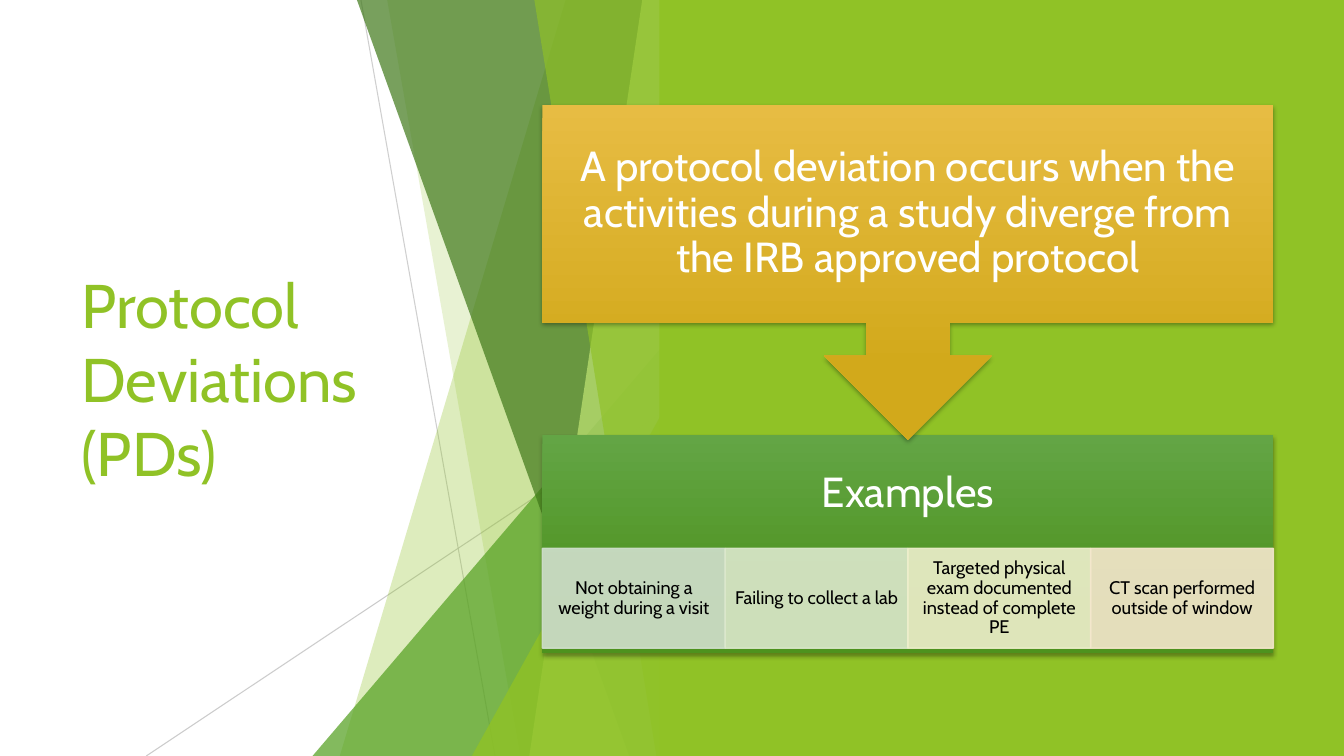
import pptx
import pptx.util
import pptx.dml.color
import pptx.enum.shapes
import pptx.enum.text
import pptx.oxml
import pptx.oxml.ns

Inches = pptx.util.Inches
Pt = pptx.util.Pt
SHAPES = pptx.enum.shapes.MSO_SHAPE
ALIGN = pptx.enum.text.PP_ALIGN

FONT = "Cabin"
SLIDE_W, SLIDE_H = 13.33, 7.5
TITLE = "Protocol Deviations (PDs)"
DEFINITION = ("A protocol deviation occurs when the activities during a study "
              "diverge from the IRB approved protocol")
EXAMPLES_HEADING = "Examples"
EXAMPLES = [
    ("Not obtaining a weight during a visit", "D1DFCD"),
    ("Failing to collect a lab", "DCE8CC"),
    ("Targeted physical exam documented instead of complete PE", "EEEFCC"),
    ("CT scan performed outside of window", "F5E7CD"),
]
GOLD = ("E7BC43", "D2A91B")
GREEN = ("63A545", "4D921E")

RAYS = [((3.58, 0), (4.91, 7.5), 75), ((6.66, 4.03), (1.45, 7.5), 80)]
FACET_RIGHT = 6.66
FACETS = [
    ("band", 5.61, 3.37, "90C226", 30),
    ("band", 3.84, 5.16, "90C226", 20),
    ("triangle", 3.1, 3.33, "54A021", 72),
    ("band", 3.54, 6.24, "3F7819", 70),
    ("band", 6.37, 5.25, "C0E474", 70),
    ("band", 5.3, 6.51, "90C226", 65),
    ("triangle", 4.68, 3.93, "90C226", 80),
]

PANEL_X, PANEL_W = 5.38, 7.25
CALLOUT_Y, CALLOUT_H = 1.04, 3.32
EXAMPLES_Y, EXAMPLES_H, HEADING_H = 4.32, 2.16, 1.16
CELL_Y, CELL_H = 5.44, 0.99
CELL_W = PANEL_W / len(EXAMPLES)
PANEL_INSET = 0.23


def paint(color_format, color, alpha=100):
    color_format.rgb = pptx.dml.color.RGBColor.from_string(color)


def fade(part, alpha):
    for color in part.iter(pptx.oxml.ns.qn("a:srgbClr")):
        color.append(pptx.oxml.parse_xml(
            f'<a:alpha {pptx.oxml.ns.nsdecls("a")} val="{alpha * 1000}"/>'))


def fill_solid(shape, color, alpha=100):
    shape.shadow.inherit = False
    shape.fill.solid()
    paint(shape.fill.fore_color, color)
    shape.line.fill.background()
    if alpha < 100:
        fade(shape._element.spPr, alpha)


def add_shape(kind, x, y, w, h):
    return slide.shapes.add_shape(kind, Inches(x), Inches(y), Inches(w), Inches(h))


def write(shape, text, size, color, insets, align=ALIGN.CENTER, spacing=0.9):
    frame = shape.text_frame
    frame.word_wrap = True
    frame.vertical_anchor = pptx.enum.text.MSO_ANCHOR.MIDDLE
    (frame.margin_left, frame.margin_top,
     frame.margin_right, frame.margin_bottom) = map(Inches, insets)
    paragraph = frame.paragraphs[0]
    paragraph.text = text
    paragraph.alignment = align
    paragraph.line_spacing = spacing
    paragraph.font.name = FONT
    paragraph.font.size = Pt(size)
    paint(paragraph.font.color, color)


def add_panel(kind, y, h, colors, text, bottom_inset):
    panel = add_shape(kind, PANEL_X, y, PANEL_W, h)
    panel.line.fill.background()
    panel.fill.gradient()
    panel.fill.gradient_angle = 270
    for stop, color, position in zip(panel.fill.gradient_stops, colors, (0, 0.78)):
        paint(stop.color, color)
        stop.position = position
    panel.shadow.inherit = False
    effects = panel._element.spPr.find(pptx.oxml.ns.qn("a:effectLst"))
    effects.append(pptx.oxml.parse_xml(
        f'<a:outerShdw {pptx.oxml.ns.nsdecls("a")} blurRad="{Pt(3)}" dist="{Pt(2)}" '
        'dir="5400000" rotWithShape="0"><a:srgbClr val="000000">'
        '<a:alpha val="35000"/></a:srgbClr></a:outerShdw>'))
    write(panel, text, 30, "FFFFFF",
          (PANEL_INSET, PANEL_INSET, PANEL_INSET, bottom_inset))


def add_ray(start, end, alpha):
    ray = slide.shapes.add_connector(
        pptx.enum.shapes.MSO_CONNECTOR.STRAIGHT, *map(Inches, start + end))
    paint(ray.line.color, "BFBFBF")
    ray.line.width = Pt(0.75)
    properties = ray._element.spPr
    fade(properties, alpha)
    properties.append(pptx.oxml.parse_xml(
        f'<a:effectLst {pptx.oxml.ns.nsdecls("a")}/>'))


def add_facet(kind, x, second, color, alpha):
    if kind == "triangle":
        facet = add_shape(SHAPES.ISOSCELES_TRIANGLE, x, second,
                          FACET_RIGHT - x, SLIDE_H - second)
        facet.adjustments[0] = 1
    else:
        corners = [(FACET_RIGHT, 0), (FACET_RIGHT, SLIDE_H), (second, SLIDE_H)]
        outline = slide.shapes.build_freeform(Inches(x), 0)
        outline.add_line_segments([tuple(map(Inches, c)) for c in corners], close=True)
        facet = outline.convert_to_shape()
    fill_solid(facet, color, alpha)


deck = pptx.Presentation()
deck.slide_width, deck.slide_height = Inches(SLIDE_W), Inches(SLIDE_H)
slide = deck.slides.add_slide(deck.slide_layouts[6])

title = slide.shapes.add_textbox(Inches(0.71), Inches(1.51), Inches(3.88), Inches(4.48))
write(title, TITLE, 44, "90C226", (0.1, 0.05, 0.1, 0.05), ALIGN.LEFT, 1.0)

for ray in RAYS:
    add_ray(*ray)
for facet in FACETS:
    add_facet(*facet)
fill_solid(add_shape(SHAPES.RECTANGLE, 6.54, 0, SLIDE_W - 6.54, SLIDE_H), "90C226")

add_panel(SHAPES.RECTANGLE, EXAMPLES_Y, EXAMPLES_H, GREEN, EXAMPLES_HEADING,
          EXAMPLES_H - HEADING_H + PANEL_INSET)
for column, (example, tint) in enumerate(EXAMPLES):
    cell = add_shape(SHAPES.RECTANGLE, PANEL_X + column * CELL_W, CELL_Y, CELL_W, CELL_H)
    fill_solid(cell, tint)
    paint(cell.line.color, tint)
    cell.line.width = Pt(1)
    fade(cell._element.spPr, 90)
    write(cell, example, 13, "000000", (0.1, 0.02, 0.1, 0.02))
add_panel(SHAPES.DOWN_ARROW_CALLOUT, CALLOUT_Y, CALLOUT_H, GOLD, DEFINITION, PANEL_INSET)

deck.save("out.pptx")
